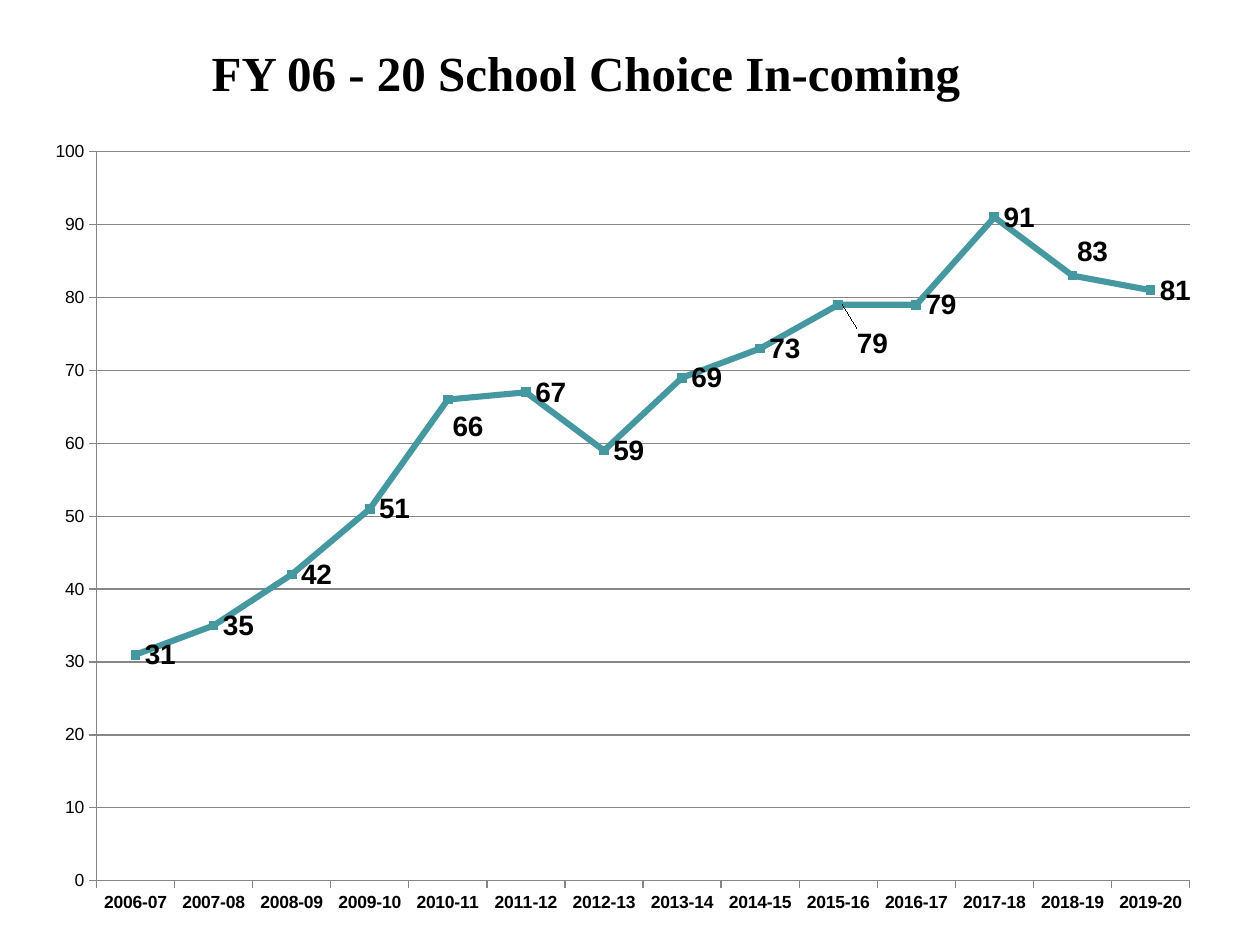
from lxml.etree import SubElement
from pptx import Presentation
from pptx.chart.data import CategoryChartData
from pptx.dml.color import RGBColor
from pptx.enum.chart import XL_CHART_TYPE, XL_LABEL_POSITION, XL_MARKER_STYLE, XL_TICK_MARK
from pptx.enum.text import MSO_ANCHOR, PP_ALIGN
from pptx.oxml.ns import qn
from pptx.util import Inches, Pt

COLORS = {"text": "000000", "line": "4597A0", "grid": "868686", "background": "FFFFFF"}
TITLE_FONT, CHART_FONT = "Times New Roman", "Arial"
FIRST_YEAR = 2006
STUDENTS = [31, 35, 42, 51, 66, 67, 59, 69, 73, 79, 79, 91, 83, 81]
PLOT_AREA = {"x": 0.055, "y": 0.032, "w": 0.925, "h": 0.907}
# Labels moved off the line: point index -> shift as a share of the chart
LABEL_SHIFTS = {4: (-0.004, 0.034), 9: (0.008, 0.048), 12: (-0.004, -0.03)}


def color(name):
    return RGBColor.from_string(COLORS[name])


def add_manual_layout(layout, values):
    manual = SubElement(layout, qn("c:manualLayout"))
    for tag, value in values.items():
        SubElement(manual, qn(f"c:{tag}")).set("val", str(value))


class ChartSlide:
    """Holds the slide and the style of its title and line chart."""

    def __init__(self, deck):
        self.slide = deck.slides.add_slide(deck.slide_layouts[5])
        fill = self.slide.background.fill
        fill.solid()
        fill.fore_color.rgb = color("background")

    def style_font(self, font, name, size, bold=False):
        font.name, font.size, font.bold = name, Pt(size), bold
        font.color.rgb = color("text")

    def add_title(self, text, left, top, width, height):
        title = self.slide.shapes.title
        title.left, title.top = Inches(left), Inches(top)
        title.width, title.height = Inches(width), Inches(height)
        frame = title.text_frame
        frame.vertical_anchor = MSO_ANCHOR.TOP
        frame.margin_top = Inches(0.09)
        para = frame.paragraphs[0]
        para.alignment = PP_ALIGN.LEFT
        span = para.add_run()
        span.text = text
        self.style_font(span.font, TITLE_FONT, 28, bold=True)

    def add_line_chart(self, categories, values, left, top, width, height):
        data = CategoryChartData()
        data.categories = categories
        data.add_series("Series 1", values)
        chart = self.slide.shapes.add_chart(
            XL_CHART_TYPE.LINE_MARKERS, Inches(left), Inches(top),
            Inches(width), Inches(height), data).chart
        chart.has_legend = chart.has_title = False
        self.style_font(chart.font, CHART_FONT, 10)
        self.style_axes(chart)
        plot = chart.plots[0]
        plot.vary_by_categories = False
        self.style_series(plot.series[0])
        self.place_plot_area(chart)

    def style_axes(self, chart):
        for axis in (chart.category_axis, chart.value_axis):
            axis.major_tick_mark = XL_TICK_MARK.OUTSIDE
            axis.minor_tick_mark = XL_TICK_MARK.NONE
            axis.format.line.color.rgb = color("grid")
            axis.format.line.width = Pt(0.75)
        self.style_font(chart.category_axis.tick_labels.font, CHART_FONT, 10, bold=True)
        scale = chart.value_axis
        scale.minimum_scale, scale.maximum_scale, scale.major_unit = 0, 100, 10
        scale.has_major_gridlines = True
        grid_line = scale.major_gridlines.format.line
        grid_line.color.rgb = color("grid")
        grid_line.width = Pt(0.75)

    def style_series(self, series):
        series.smooth = False
        series.format.line.color.rgb = color("line")
        series.format.line.width = Pt(3.5)
        marker = series.marker
        marker.style, marker.size = XL_MARKER_STYLE.SQUARE, 5
        marker.format.fill.solid()
        marker.format.fill.fore_color.rgb = color("line")
        marker.format.line.color.rgb = color("line")
        labels = series.data_labels
        labels.show_value = True
        labels.position = XL_LABEL_POSITION.RIGHT
        self.style_font(labels.font, CHART_FONT, 16, bold=True)
        for index in LABEL_SHIFTS:
            label = series.points[index].data_label
            label.position = XL_LABEL_POSITION.RIGHT
            self.style_font(label.font, CHART_FONT, 16, bold=True)
        for label in series._element.iter(qn("c:dLbl")):
            index_tag = label.find(qn("c:idx"))
            layout = SubElement(label, qn("c:layout"))
            index_tag.addnext(layout)
            shift_x, shift_y = LABEL_SHIFTS[int(index_tag.get("val"))]
            add_manual_layout(layout, {"x": shift_x, "y": shift_y})

    def place_plot_area(self, chart):
        area = chart._chartSpace.find(f".//{qn('c:plotArea')}")
        layout = area.find(qn("c:layout"))
        if layout is None:
            layout = SubElement(area, qn("c:layout"))
            area.insert(0, layout)
        modes = {"layoutTarget": "inner", "xMode": "edge", "yMode": "edge"}
        add_manual_layout(layout, modes | PLOT_AREA)


def main():
    deck = Presentation()
    deck.slide_width, deck.slide_height = Inches(10), Inches(7.5)
    page = ChartSlide(deck)
    page.add_title("FY 06 - 20 School Choice In-coming", 1.58, 0.25, 6.67, 0.98)
    years = range(FIRST_YEAR, FIRST_YEAR + len(STUDENTS))
    school_years = [f"{year}-{(year + 1) % 100:02d}" for year in years]
    page.add_line_chart(school_years, STUDENTS, 0.25, 1, 9.38, 6.38)
    deck.save("out.pptx")


if __name__ == "__main__":
    main()
